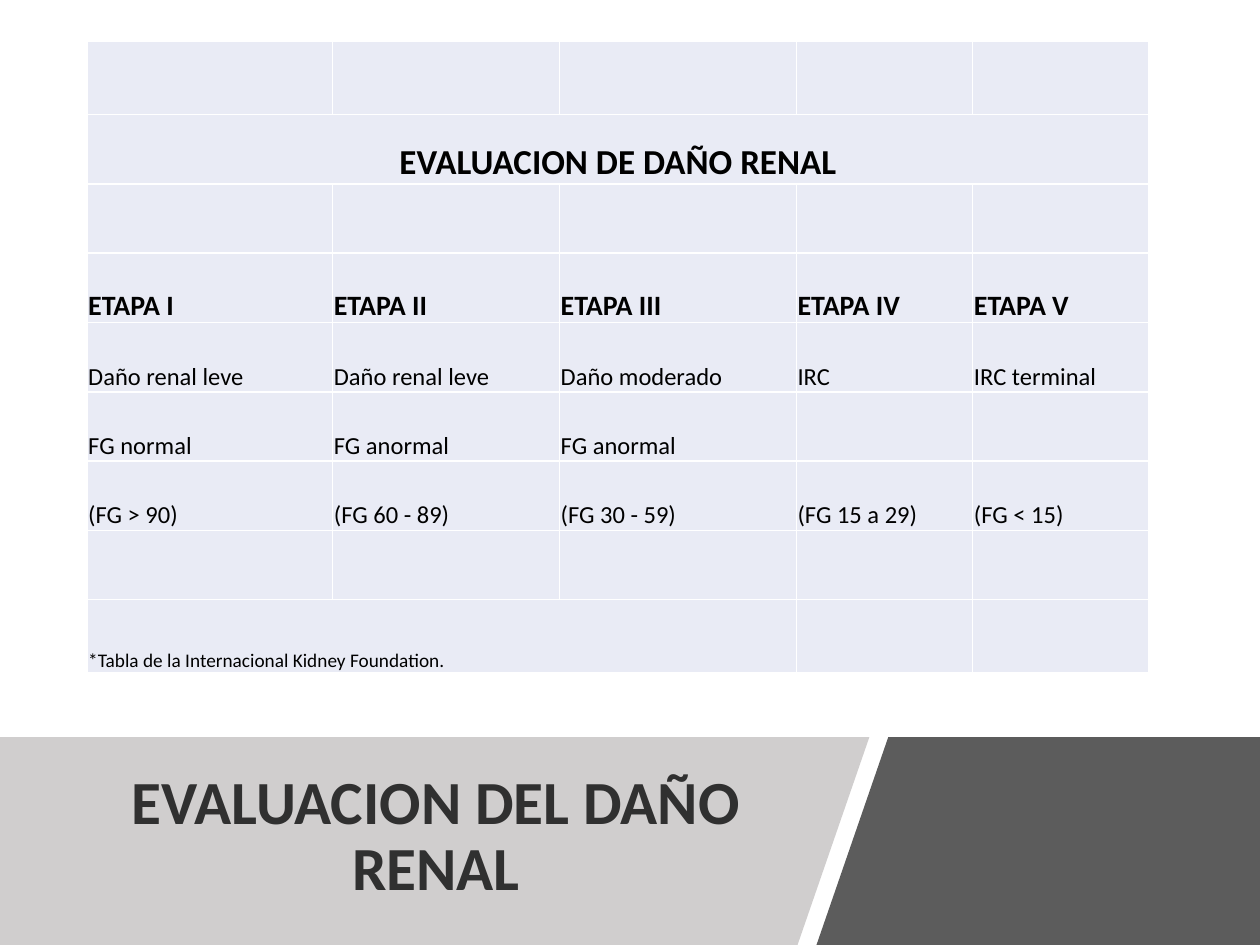
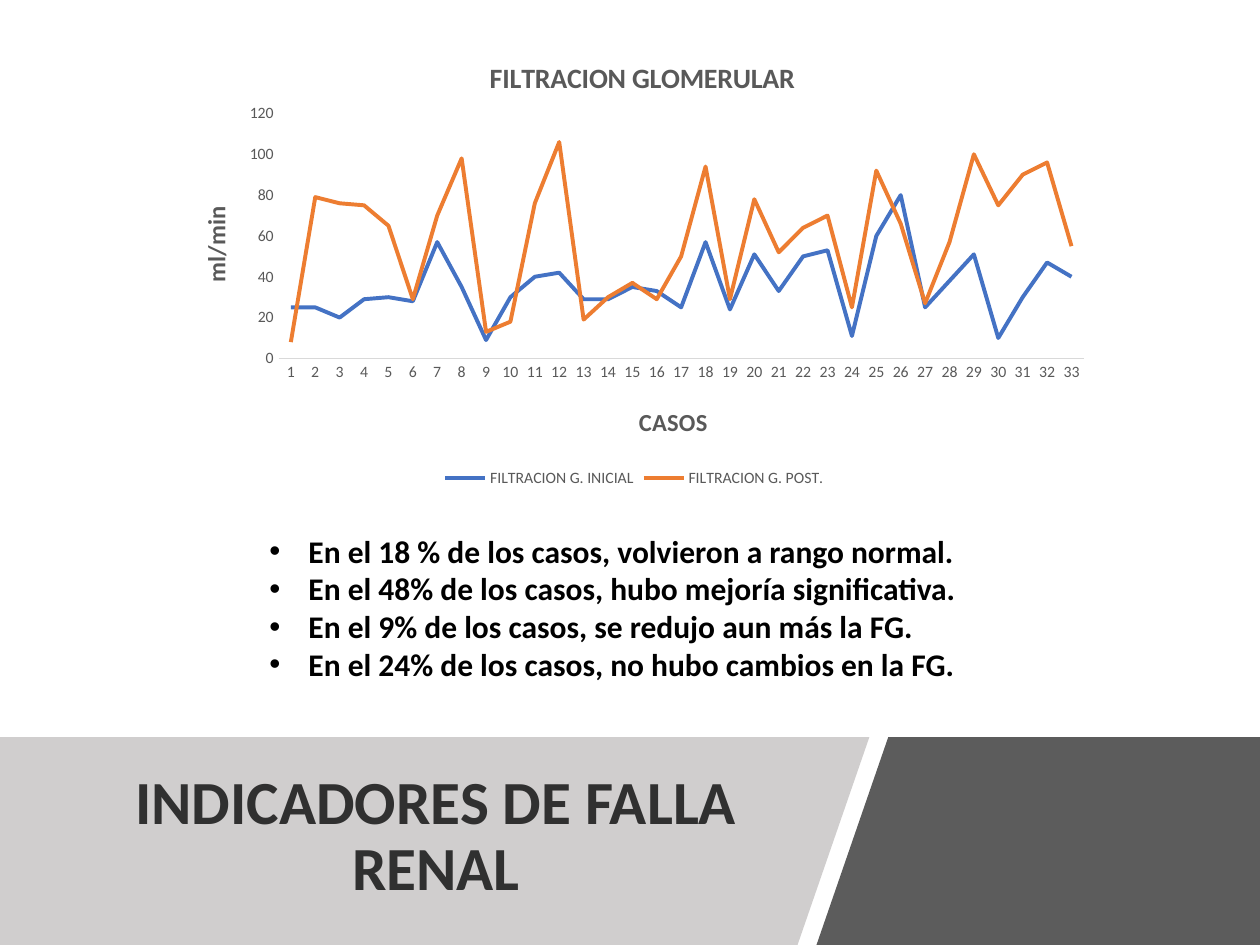
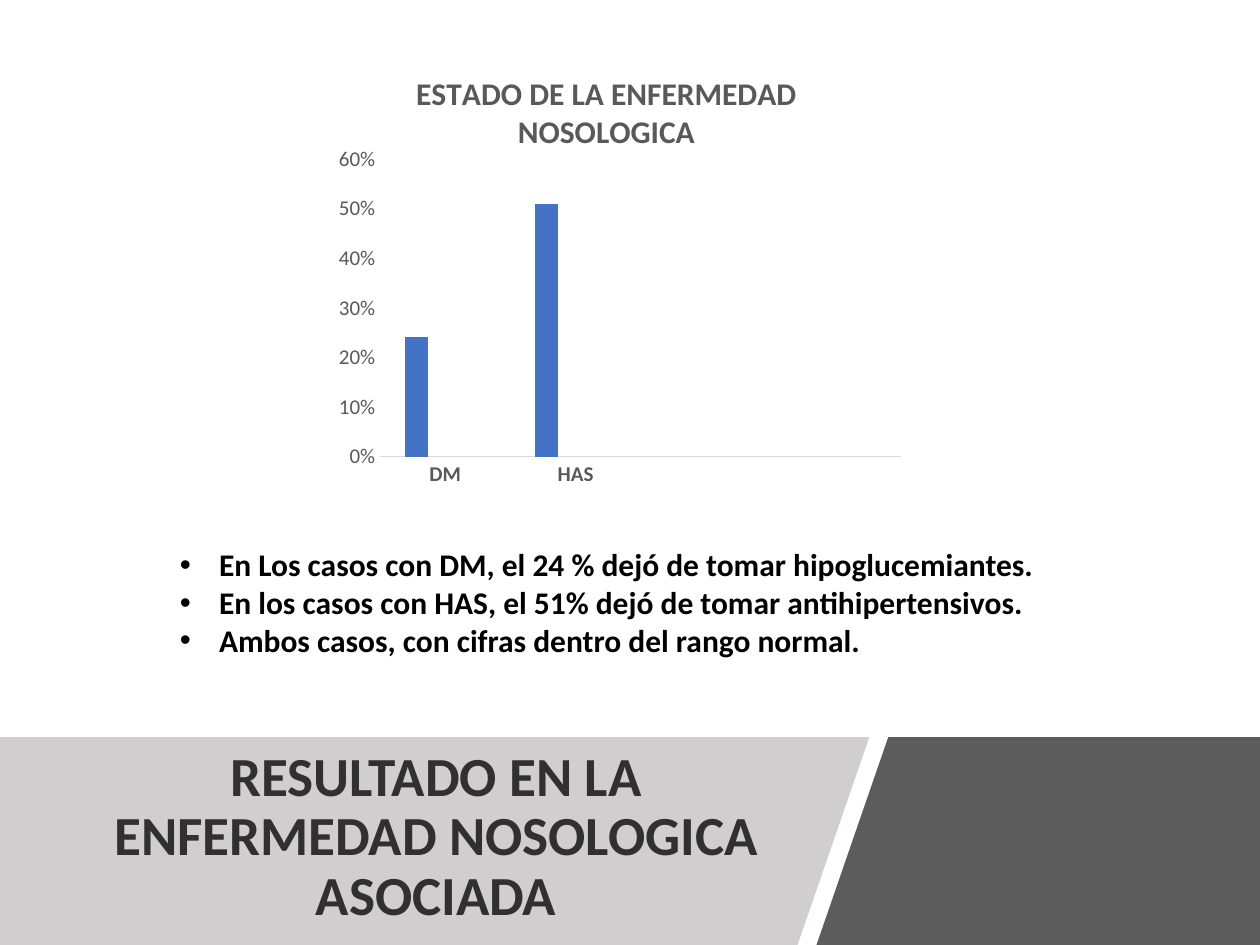
from dataclasses import dataclass

from lxml import etree
from pptx import Presentation
from pptx import util as u
from pptx.chart.data import CategoryChartData
from pptx.dml.color import RGBColor
from pptx.enum import chart as ch
from pptx.enum import text
from pptx.oxml import parse_xml
from pptx.oxml.ns import nsdecls, qn


@dataclass(frozen=True)
class Theme:
    font: str = "Calibri"
    white: str = "FFFFFF"
    black: str = "000000"
    band: str = "D0CECE"
    accent: str = "404040"
    accent_alpha: int = 85
    title_color: str = "303030"
    cell: str = "E9EBF5"
    chart_text: str = "595959"
    axis_line: str = "D9D9D9"
    series: tuple = ("4472C4", "ED7D31", "A5A5A5")
    title: float = 35
    title_small: float = 31.5
    bullet: float = 18
    table_title: float = 20
    table_head: float = 16
    table_body: float = 14
    table_note: float = 11


BAND = [(0, 5.85), (6.9, 5.85), (6.33, 7.5), (0, 7.5)]
ACCENT = [(7.05, 5.85), (10, 5.85), (10, 7.5), (6.48, 7.5)]


class Deck:
    def __init__(self, theme):
        self.t = theme
        self.prs = Presentation()
        self.prs.slide_width, self.prs.slide_height = u.Inches(10), u.Inches(7.5)
        self.s = None

    def style(self, font, size, color, bold=False):
        font.name, font.size, font.bold = self.t.font, u.Pt(size), bold
        font.color.rgb = RGBColor.from_string(color)

    def box(self, at):
        return [u.Inches(v) for v in at]

    # Slide frame: band, title, accent
    def slide(self, title, size):
        self.s = self.prs.slides.add_slide(self.prs.slide_layouts[6])
        self.outline(BAND, self.t.band)
        tf = self.s.shapes.add_textbox(*self.box((0.69, 6.05, 5.54, 1.2))).text_frame
        tf.word_wrap = True
        tf.vertical_anchor = text.MSO_ANCHOR.MIDDLE
        p = tf.paragraphs[0]
        p.text, p.alignment, p.line_spacing = title, text.PP_ALIGN.CENTER, 0.9
        self.style(p.font, size, self.t.title_color, True)
        self.outline(ACCENT, self.t.accent, self.t.accent_alpha)

    def outline(self, points, color, alpha=100):
        start, *rest = [self.box(pt) for pt in points]
        builder = self.s.shapes.build_freeform(*start)
        builder.add_line_segments(rest)
        sp = builder.convert_to_shape()
        sp.shadow.inherit = False
        sp.line.fill.background()
        sp.fill.solid()
        sp.fill.fore_color.rgb = RGBColor.from_string(color)
        if alpha < 100:
            clr = sp.fill._xPr.find(".//" + qn("a:srgbClr"))
            etree.SubElement(clr, qn("a:alpha")).set("val", str(alpha * 1000))

    def bullets(self, at, lines):
        tf = self.s.shapes.add_textbox(*self.box(at)).text_frame
        tf.word_wrap = True
        for i, line in enumerate(lines):
            p = tf.add_paragraph() if i else tf.paragraphs[0]
            p.text = line
            self.style(p.font, self.t.bullet, self.t.black, True)
            pPr = p._p.get_or_add_pPr()
            pPr.set("marL", str(u.Inches(0.31)))
            pPr.set("indent", str(-u.Inches(0.31)))
            pPr.insert(0, parse_xml(f'<a:buFont {nsdecls("a")} typeface="Arial"/>'))
            pPr.insert(1, parse_xml(f'<a:buChar {nsdecls("a")} char="•"/>'))

    # Table: rows hold (size, bold, texts); merges hold (row, last column)
    def table(self, at, widths, heights, rows, merges):
        tbl = self.s.shapes.add_table(len(heights), len(widths), *self.box(at)).table
        for col, w in zip(tbl.columns, widths):
            col.width = u.Inches(w)
        for row, h in zip(tbl.rows, heights):
            row.height = u.Inches(h)
        for cell in tbl.iter_cells():
            self.cell(cell)
        for r, last in merges:
            tbl.cell(r, 0).merge(tbl.cell(r, last))
        for r, (size, bold, texts) in rows.items():
            for c, value in enumerate(texts):
                p = tbl.cell(r, c).text_frame.paragraphs[0]
                p.text = value
                self.style(p.font, size, self.t.black, bold)
        return tbl

    def cell(self, cell):
        cell.margin_left = cell.margin_right = cell.margin_top = u.Inches(0.01)
        cell.margin_bottom = 0
        cell.vertical_anchor = text.MSO_ANCHOR.BOTTOM
        tcPr = cell._tc.get_or_add_tcPr()
        for side in ("lnL", "lnR", "lnT", "lnB"):
            tcPr.append(parse_xml(
                f'<a:{side} {nsdecls("a")} w="{u.Pt(1)}"><a:solidFill>'
                f'<a:srgbClr val="{self.t.white}"/></a:solidFill></a:{side}>'))
        cell.fill.solid()
        cell.fill.fore_color.rgb = RGBColor.from_string(self.t.cell)

    # Charts
    def chart(self, kind, at, cats, series, title, plot, fmt="General"):
        data = CategoryChartData(number_format=fmt)
        data.categories = cats
        for name, values in series:
            data.add_series(name, values)
        chart = self.s.shapes.add_chart(kind, *self.box(at), data).chart
        self.style(chart.font, 10, self.t.black)
        chart.has_legend = False
        chart.has_title = True
        self.chart_title(chart.chart_title, *title)
        area = chart._chartSpace.chart.plotArea
        for old in area.findall(qn("c:layout")):
            area.remove(old)
        area.insert(0, self.layout(*plot))
        chart.plots[0].vary_by_categories = False
        return chart

    def layout(self, x, y, w=None, h=None):
        parts = [("layoutTarget", "inner")] if w else []
        parts += [("xMode", "edge"), ("yMode", "edge"), ("x", x), ("y", y)]
        parts += [("w", w), ("h", h)] if w else []
        body = "".join(f'<c:{tag} val="{val}"/>' for tag, val in parts)
        return parse_xml(f'<c:layout {nsdecls("c")}><c:manualLayout>{body}'
                         '</c:manualLayout></c:layout>')

    def chart_title(self, title, words, size, x, y):
        p = title.text_frame.paragraphs[0]
        p.text = words
        self.style(p.font, size, self.t.chart_text, True)
        for old in title._element.findall(qn("c:layout")):
            title._element.remove(old)
        title._element.find(qn("c:tx")).addnext(self.layout(x, y))

    def axes(self, chart, size, top, step, fmt="General", bold_cats=False):
        cat, val = chart.category_axis, chart.value_axis
        for axis, bold in ((cat, bold_cats), (val, False)):
            axis.has_major_gridlines = False
            axis.major_tick_mark = axis.minor_tick_mark = ch.XL_TICK_MARK.NONE
            self.style(axis.tick_labels.font, size, self.t.chart_text, bold)
        cat.format.line.color.rgb = RGBColor.from_string(self.t.axis_line)
        cat.format.line.width = u.Pt(0.75)
        val.format.line.fill.background()
        val.minimum_scale, val.maximum_scale, val.major_unit = 0, top, step
        val.tick_labels.number_format = fmt
        val.tick_labels.number_format_is_linked = False

    def line_chart(self, at, cats, series, title, plot, cat_title, val_title):
        chart = self.chart(ch.XL_CHART_TYPE.LINE, at, cats, series, title, plot)
        self.axes(chart, 9, 120, 20)
        self.chart_title(chart.category_axis.axis_title, *cat_title)
        self.chart_title(chart.value_axis.axis_title, *val_title)
        chart.has_legend = True
        chart.legend.position = ch.XL_LEGEND_POSITION.BOTTOM
        chart.legend.include_in_layout = False
        self.style(chart.legend.font, 9, self.t.chart_text)
        for ser, color in zip(chart.series, self.t.series):
            ser.smooth = False
            ser.marker.style = ch.XL_MARKER_STYLE.NONE
            ser.format.line.color.rgb = RGBColor.from_string(color)
            ser.format.line.width = u.Pt(2.25)

    def column_chart(self, at, cats, series, title, plot):
        chart = self.chart(ch.XL_CHART_TYPE.COLUMN_CLUSTERED, at, cats, series,
                           title, plot, "0%")
        self.axes(chart, 12, 0.6, 0.1, "0%", bold_cats=True)
        chart.plots[0].gap_width, chart.plots[0].overlap = 219, -27
        for ser, color in zip(chart.series, self.t.series):
            ser.format.fill.solid()
            ser.format.fill.fore_color.rgb = RGBColor.from_string(color)


def main():
    t = Theme()
    deck = Deck(t)

    # Stages of kidney damage
    deck.slide("EVALUACION DEL DAÑO RENAL", t.title)
    tbl = deck.table(
        (0.69, 0.33, 8.43, 5), [1.95, 1.8, 1.88, 1.4, 1.4],
        [0.58] + [0.55] * 7 + [0.58],
        {1: (t.table_title, True, ["EVALUACION DE DAÑO RENAL"]),
         3: (t.table_head, True,
             [f"ETAPA {n}" for n in ("I", "II", "III", "IV", "V")]),
         4: (t.table_body, False, ["Daño renal leve", "Daño renal leve",
                                   "Daño moderado", "IRC", "IRC terminal"]),
         5: (t.table_body, False, ["FG normal", "FG anormal", "FG anormal"]),
         6: (t.table_body, False, ["(FG > 90)", "(FG 60 - 89)", "(FG 30 - 59)",
                                   "(FG 15 a 29)", "(FG < 15)"]),
         8: (t.table_note, False,
             ["*Tabla de la Internacional Kidney Foundation."])},
        merges=[(1, 4), (8, 2)])
    tbl.cell(1, 0).text_frame.paragraphs[0].alignment = text.PP_ALIGN.CENTER

    # Glomerular filtration by case
    deck.slide("INDICADORES DE FALLA RENAL", t.title)
    deck.bullets((2.04, 4.17, 5.84, 1.31), [
        "En el 18 % de los casos, volvieron a rango normal.",
        "En el 48% de los casos, hubo mejoría significativa.",
        "En el 9% de los casos, se redujo aun más la FG.",
        "En el 24% de los casos, no hubo cambios en la FG."])
    initial = [25, 25, 20, 29, 30, 28, 57, 35, 9, 30, 40, 42, 29, 29, 35, 33, 25,
               57, 24, 51, 33, 50, 53, 11, 60, 80, 25, 38, 51, 10, 30, 47, 40]
    later = [8, 79, 76, 75, 65, 29, 70, 98, 13, 18, 76, 106, 19, 30, 37, 29, 50,
             94, 29, 78, 52, 64, 70, 25, 92, 66, 27, 57, 100, 75, 90, 96, 55]
    deck.line_chart(
        (1.32, 0.24, 7.43, 3.67), [str(n + 1) for n in range(len(initial))],
        [("FILTRACION G. INICIAL", initial), ("FILTRACION G. POST.", later)],
        title=("FILTRACION GLOMERULAR", 16, 0.34, 0.05),
        plot=(0.12, 0.18, 0.86, 0.53),
        cat_title=("CASOS", 14, 0.5, 0.8),
        val_title=("ml/min", 14, 0.03, 0.37))

    # Change in the associated disease
    deck.slide("RESULTADO EN LA ENFERMEDAD NOSOLOGICA ASOCIADA", t.title_small)
    deck.bullets((1.33, 4.28, 7.11, 1.01), [
        "En Los casos con DM, el 24 % dejó de tomar hipoglucemiantes.",
        "En los casos con HAS, el 51% dejó de tomar antihipertensivos.",
        "Ambos casos, con cifras dentro del rango normal."])
    empty = [None] * 4
    deck.column_chart(
        (2.44, 0.34, 4.81, 3.69), ["DM", "HAS", "", ""],
        [("Series 1", [0.24, 0.51, None, None]),
         ("Series 2", empty), ("Series 3", empty)],
        title=("ESTADO DE LA ENFERMEDAD NOSOLOGICA", 18, 0.17, 0.05),
        plot=(0.12, 0.25, 0.86, 0.64))

    deck.prs.save("out.pptx")


if __name__ == "__main__":
    main()
